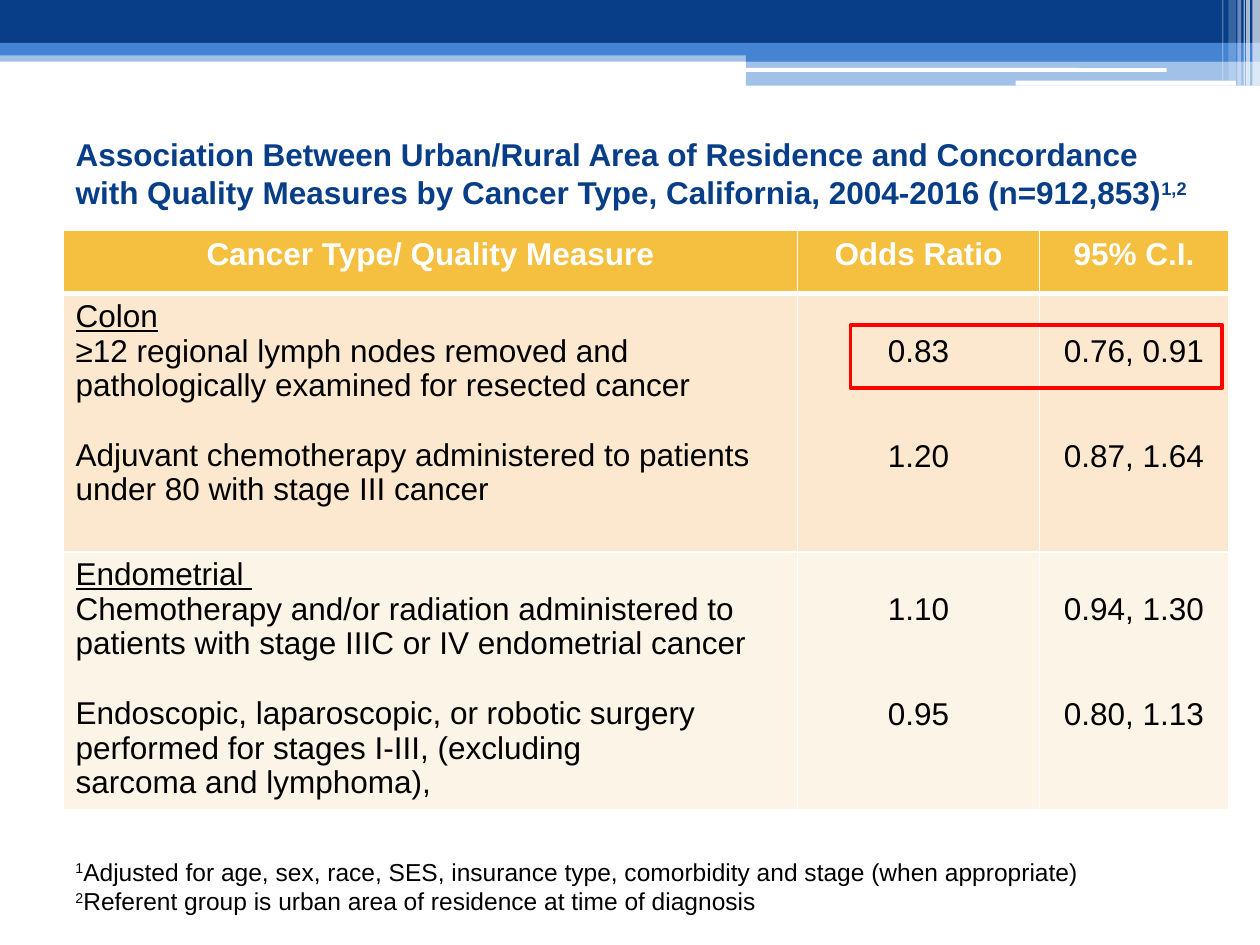
from dataclasses import dataclass
from lxml import etree
from pptx import Presentation
from pptx import util as u
from pptx.dml.color import RGBColor
from pptx.enum import shapes, text
from pptx.oxml.ns import qn

EMU_PER_PX = 9144  # 100 px to the inch
FONT = "Arial"
LINE_PT = 20  # height of one table line
COLORS = {
    "navy": "073E87", "blue": "4584D3", "white": "FFFFFF", "black": "000000",
    "header": "F5C040", "colon": "FBE8CF", "endometrial": "FDF4E8", "red": "FF0000",
}


@dataclass
class Bar:
    left: int
    top: int
    width: int
    height: int
    color: str
    opacity: int = 100
    rounded: bool = False


@dataclass
class Measure:
    lines: list[str]
    odds_ratio: str
    interval: str


@dataclass
class Cancer:
    name: str
    color: str
    measures: list[Measure]


BANNER = [
    Bar(0, 40, 1000, 9, "blue", 50),
    Bar(0, 0, 1000, 34, "navy"),
    Bar(0, 34, 1000, 10, "blue"),
    Bar(592, 39, 408, 10, "blue"),
    Bar(592, 48, 408, 20, "blue", 50),
    Bar(591, 54, 335, 3, "white", rounded=True),
    Bar(806, 64, 175, 4, "white", rounded=True),
    Bar(994, 0, 6, 68, "white", 65),
    Bar(989, 0, 3, 68, "white", 65),
    Bar(987, 0, 1, 68, "white", 60),
    Bar(982, 0, 3, 68, "white", 40),
    Bar(975, 0, 6, 64, "white", 20),
    Bar(970, 0, 1, 64, "white", 30),
]
HEADINGS = ["Cancer Type/ Quality Measure", "Odds Ratio", "95% C.I."]
COLUMN_WIDTHS = [583, 192, 150]
ROW_HEIGHTS = [50, 205, 205]
CANCERS = [
    Cancer("Colon", "colon", [
        Measure(["≥12 regional lymph nodes removed and",
                 "pathologically examined for resected cancer"], "0.83", "0.76, 0.91"),
        Measure(["Adjuvant chemotherapy administered to patients",
                 "under 80 with stage III cancer"], "1.20", "0.87, 1.64"),
    ]),
    Cancer("Endometrial ", "endometrial", [
        Measure(["Chemotherapy and/or radiation administered to",
                 "patients with stage IIIC or IV endometrial cancer"], "1.10", "0.94, 1.30"),
        Measure(["Endoscopic, laparoscopic, or robotic surgery",
                 "performed for stages I-III, (excluding",
                 "sarcoma and lymphoma),"], "0.95", "0.80, 1.13"),
    ]),
]
FOOTNOTES = [
    ("1", "Adjusted for age, sex, race, SES, insurance type, comorbidity and stage (when appropriate)"),
    ("2", "Referent group is urban area of residence at time of diagnosis"),
]


def px(length: int) -> u.Emu:
    return u.Emu(length * EMU_PER_PX)


def rgb(name: str) -> RGBColor:
    return RGBColor.from_string(COLORS[name])


def add_run(paragraph, words: str, size: int, color: str = "black", bold: bool = False,
            underline: bool = False, superscript: bool = False) -> None:
    run = paragraph.add_run()
    run.text = words
    font = run.font
    font.name, font.size, font.bold, font.underline = FONT, u.Pt(size), bold, underline
    font.color.rgb = rgb(color)
    if superscript:
        run._r.get_or_add_rPr().set("baseline", "30000")


def next_paragraph(frame, first: bool):
    return frame.paragraphs[0] if first else frame.add_paragraph()


def add_bar(slide, bar: Bar) -> None:
    preset = shapes.MSO_SHAPE.ROUNDED_RECTANGLE if bar.rounded else shapes.MSO_SHAPE.RECTANGLE
    shape = slide.shapes.add_shape(preset, px(bar.left), px(bar.top), px(bar.width), px(bar.height))
    shape.shadow.inherit = False
    shape.line.fill.background()
    shape.fill.solid()
    shape.fill.fore_color.rgb = rgb(bar.color)
    if bar.opacity < 100:
        color = shape._element.spPr.find(qn("a:solidFill"))[0]
        etree.SubElement(color, qn("a:alpha")).set("val", str(bar.opacity * 1000))


def style_cell(cell, color: str, top_pt: int, bottom_pt: int) -> None:
    cell.fill.solid()
    cell.fill.fore_color.rgb = rgb(color)
    properties = cell._tc.get_or_add_tcPr()
    borders = [("L", 1), ("R", 1), ("T", top_pt), ("B", bottom_pt)]
    for position, (side, points) in enumerate(borders):
        border = etree.Element(qn(f"a:ln{side}"), w=str(u.Pt(points)))
        fill = etree.SubElement(border, qn("a:solidFill"))
        etree.SubElement(fill, qn("a:srgbClr")).set("val", COLORS["white"])
        properties.insert(position, border)


def fill_measures(cell, cancer: Cancer) -> None:
    heading = cell.text_frame.paragraphs[0]
    heading.line_spacing = 0.98
    add_run(heading, cancer.name, 18, underline=True)
    for number, measure in enumerate(cancer.measures):
        for position, line in enumerate(measure.lines):
            paragraph = cell.text_frame.add_paragraph()
            paragraph.line_spacing = 0.98
            if number and not position:
                paragraph.space_before = u.Pt(LINE_PT)
            add_run(paragraph, line, 18)


def fill_values(cell, values: list[str]) -> None:
    # Values start level with the first measure, one line down
    cell.margin_top = u.Pt(LINE_PT) + px(5)
    for number, value in enumerate(values):
        paragraph = next_paragraph(cell.text_frame, number == 0)
        paragraph.alignment = text.PP_ALIGN.CENTER
        paragraph.line_spacing = 0.98
        if number:
            paragraph.space_before = u.Pt(2 * LINE_PT)
        add_run(paragraph, value, 18)


def add_results(slide) -> None:
    table = slide.shapes.add_table(len(ROW_HEIGHTS), len(COLUMN_WIDTHS), px(50), px(183),
                                   px(sum(COLUMN_WIDTHS)), px(sum(ROW_HEIGHTS))).table
    table.horz_banding = False
    for column, width in zip(table.columns, COLUMN_WIDTHS):
        column.width = px(width)
    for row, height in zip(table.rows, ROW_HEIGHTS):
        row.height = px(height)
    for cell, heading in zip(table.rows[0].cells, HEADINGS):
        style_cell(cell, "header", 1, 3)
        paragraph = cell.text_frame.paragraphs[0]
        paragraph.alignment = text.PP_ALIGN.CENTER
        add_run(paragraph, heading, 18, "white", bold=True)
    for number, cancer in enumerate(CANCERS, start=1):
        measures, ratios, intervals = table.rows[number].cells
        for cell in (measures, ratios, intervals):
            style_cell(cell, cancer.color, 3 if number == 1 else 1, 1)
        fill_measures(measures, cancer)
        fill_values(ratios, [m.odds_ratio for m in cancer.measures])
        fill_values(intervals, [m.interval for m in cancer.measures])


def main() -> None:
    deck = Presentation()
    deck.slide_width, deck.slide_height = px(1000), px(750)
    slide = deck.slides.add_slide(deck.slide_layouts[5])

    # Banner
    for bar in BANNER:
        add_bar(slide, bar)

    # Title
    title = slide.shapes.title
    title.left, title.top, title.width, title.height = px(50), px(100), px(917), px(75)
    title.text_frame.vertical_anchor = text.MSO_ANCHOR.MIDDLE
    title.text_frame.auto_size = text.MSO_AUTO_SIZE.NONE
    headline = title.text_frame.paragraphs[0]
    headline.alignment = text.PP_ALIGN.LEFT
    add_run(headline, "Association Between Urban/Rural Area of Residence and Concordance with Quality "
            "Measures by Cancer Type, California, 2004-2016 (n=912,853)", 18, "navy", bold=True)
    add_run(headline, "1,2", 18, "navy", bold=True, superscript=True)

    # Results table
    add_results(slide)

    # Footnotes
    notes = slide.shapes.add_textbox(px(50), px(675), px(821), px(57)).text_frame
    notes.word_wrap = False
    for number, (mark, note) in enumerate(FOOTNOTES):
        paragraph = next_paragraph(notes, number == 0)
        add_run(paragraph, mark, 14, superscript=True)
        add_run(paragraph, note, 14)

    # Frame around the significant result
    highlight = slide.shapes.add_shape(shapes.MSO_SHAPE.RECTANGLE, px(675), px(258), px(295), px(50))
    highlight.shadow.inherit = False
    highlight.fill.background()
    highlight.line.color.rgb = rgb("red")
    highlight.line.width = u.Pt(2)

    deck.save("out.pptx")


if __name__ == "__main__":
    main()
